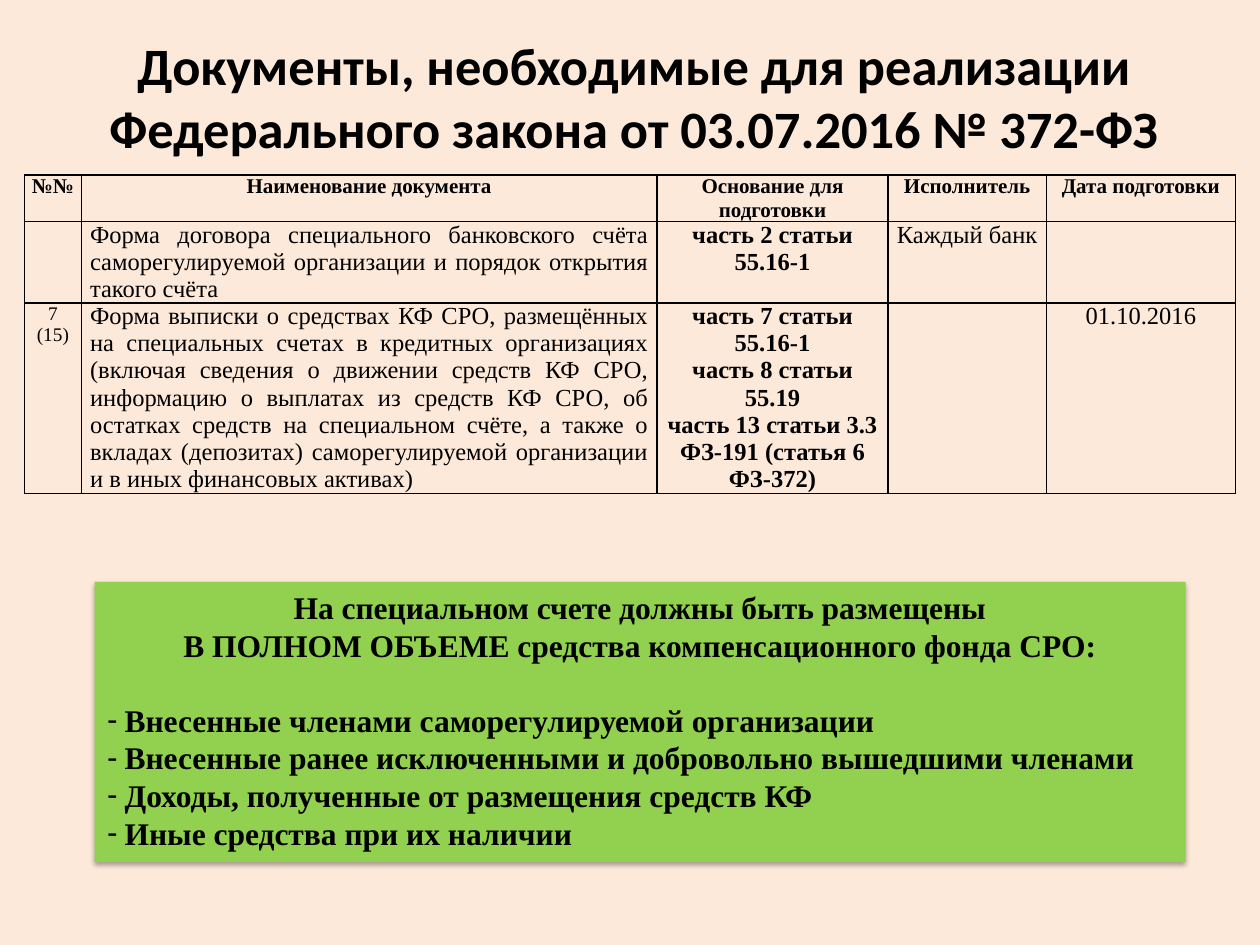
import pptx
import pptx.dml.color
import pptx.enum.text
import pptx.oxml
import pptx.oxml.ns
import pptx.util
from lxml import etree

Pt = pptx.util.Pt
ALIGN = pptx.enum.text.PP_ALIGN
ANCHOR = pptx.enum.text.MSO_ANCHOR
qn = pptx.oxml.ns.qn

COLORS = {"background": "FDE9D9", "text": "000000", "panel": "92D050"}
SERIF = "Times New Roman"

TITLE = "Документы, необходимые для реализации Федерального закона от 03.07.2016 №\u00a0372-ФЗ"
COLUMN_WIDTHS = [32.5, 329, 132, 90.5, 108]
ROW_HEIGHTS = [26, 46, 109]
DOCUMENTS = [
    ["№№", "Наименование документа", "Основание для подготовки", "Исполнитель", "Дата подготовки"],
    ["", "Форма договора специального банковского счёта саморегулируемой организации "
         "и порядок открытия такого счёта",
     "часть 2 статьи 55.16-1", "Каждый банк", ""],
    ["7\n(15)", "Форма выписки о средствах КФ СРО, размещённых на специальных счетах в кредитных "
                "организациях (включая сведения о движении средств КФ СРО, информацию о выплатах из "
                "средств КФ СРО, об остатках средств на специальном счёте, а также о вкладах "
                "(депозитах) саморегулируемой организации и в иных финансовых активах)",
     "часть 7 статьи 55.16-1\nчасть 8 статьи 55.19\nчасть 13 статьи 3.3 ФЗ-191 (статья 6 ФЗ-372)",
     "", "01.10.2016"],
]
HEADING = ["На специальном счете должны быть размещены",
           "В ПОЛНОМ ОБЪЕМЕ средства компенсационного фонда СРО:"]
FUNDS = ["Внесенные членами саморегулируемой организации",
         "Внесенные ранее исключенными и добровольно вышедшими членами",
         "Доходы, полученные от размещения средств КФ",
         "Иные средства при их наличии"]


def rgb(name):
    return pptx.dml.color.RGBColor.from_string(COLORS[name])


def place(shape, left, top, width, height):
    shape.left, shape.top, shape.width, shape.height = map(Pt, (left, top, width, height))


def format_text(paragraph, size, font=SERIF, bold=True, align=ALIGN.CENTER):
    paragraph.alignment = align
    for run in paragraph.runs:
        run.font.name = font
        run.font.size = Pt(size)
        run.font.bold = bold
        run.font.color.rgb = rgb("text")


def set_bullet(paragraph, char=None):
    """Give the paragraph a hanging bullet, or none without a char."""
    properties = paragraph._p.get_or_add_pPr()
    indent = Pt(10) if char else 0
    properties.set("marL", str(indent))
    properties.set("indent", str(-indent))
    if char:
        etree.SubElement(properties, qn("a:buChar"), char=char)
    else:
        etree.SubElement(properties, qn("a:buNone"))


def add_soft_shadow(shape):
    effects = etree.SubElement(shape._element.spPr, qn("a:effectLst"))
    shadow = etree.SubElement(effects, qn("a:outerShdw"), blurRad=str(Pt(3.1)),
                              dist=str(Pt(1.8)), dir="5400000", rotWithShape="0")
    color = etree.SubElement(shadow, qn("a:srgbClr"), val=COLORS["text"])
    etree.SubElement(color, qn("a:alpha"), val="35000")


def set_borders(cell):
    properties = cell._tc.get_or_add_tcPr()
    for position, side in enumerate(("a:lnL", "a:lnR", "a:lnT", "a:lnB")):
        line = etree.Element(qn(side), w=str(Pt(1)))
        fill = etree.SubElement(line, qn("a:solidFill"))
        etree.SubElement(fill, qn("a:srgbClr"), val=COLORS["text"])
        properties.insert(position, line)


def fill_title(title):
    place(title, 31, 15, 663, 63)
    title.text_frame.text = TITLE
    title.text_frame.vertical_anchor = ANCHOR.TOP
    title.text_frame.auto_size = pptx.enum.text.MSO_AUTO_SIZE.NONE
    format_text(title.text_frame.paragraphs[0], 30, "Calibri")


def fill_cell(cell, text, row, column):
    cell.fill.background()
    cell.margin_left = cell.margin_right = Pt(5 if row else 3.6)
    cell.margin_top = cell.margin_bottom = 0
    set_borders(cell)
    cell.text_frame.text = text
    size = 12 if row == 0 else 11 if column == 0 else 14
    align = ALIGN.JUSTIFY if row and column == 1 else ALIGN.CENTER
    for paragraph in cell.text_frame.paragraphs:
        format_text(paragraph, size, bold=row == 0 or column == 2, align=align)


def add_documents_table(slide):
    table = slide.shapes.add_table(len(ROW_HEIGHTS), len(COLUMN_WIDTHS), Pt(14), Pt(100),
                                   Pt(sum(COLUMN_WIDTHS)), Pt(sum(ROW_HEIGHTS))).table
    table.first_row = table.horz_banding = False
    for column, width in zip(table.columns, COLUMN_WIDTHS):
        column.width = Pt(width)
    for row, height in zip(table.rows, ROW_HEIGHTS):
        row.height = Pt(height)
    for row, texts in enumerate(DOCUMENTS):
        for column, text in enumerate(texts):
            fill_cell(table.cell(row, column), text, row, column)


def fill_funds_panel(panel):
    place(panel, 54, 332.5, 623.5, 160)
    panel.fill.solid()
    panel.fill.fore_color.rgb = rgb("panel")
    panel.line.fill.background()
    add_soft_shadow(panel)
    frame = panel.text_frame
    frame.text = "\n".join(HEADING + FUNDS)
    frame.vertical_anchor = ANCHOR.TOP
    frame.auto_size = pptx.enum.text.MSO_AUTO_SIZE.NONE
    for index, paragraph in enumerate(frame.paragraphs):
        is_fund = index >= len(HEADING)
        format_text(paragraph, 18, align=ALIGN.JUSTIFY if is_fund else ALIGN.CENTER)
        paragraph.line_spacing = Pt(21.5)
        paragraph.space_before = Pt(21.5 if index == len(HEADING) else 0)
        set_bullet(paragraph, "-" if is_fund else None)


def main():
    presentation = pptx.Presentation()
    presentation.slide_width, presentation.slide_height = Pt(720), Pt(540)
    slide = presentation.slides.add_slide(presentation.slide_layouts[1])
    slide.background.fill.solid()
    slide.background.fill.fore_color.rgb = rgb("background")
    fill_title(slide.shapes.title)
    add_documents_table(slide)
    fill_funds_panel(slide.placeholders[1])
    presentation.save("out.pptx")


if __name__ == "__main__":
    main()
